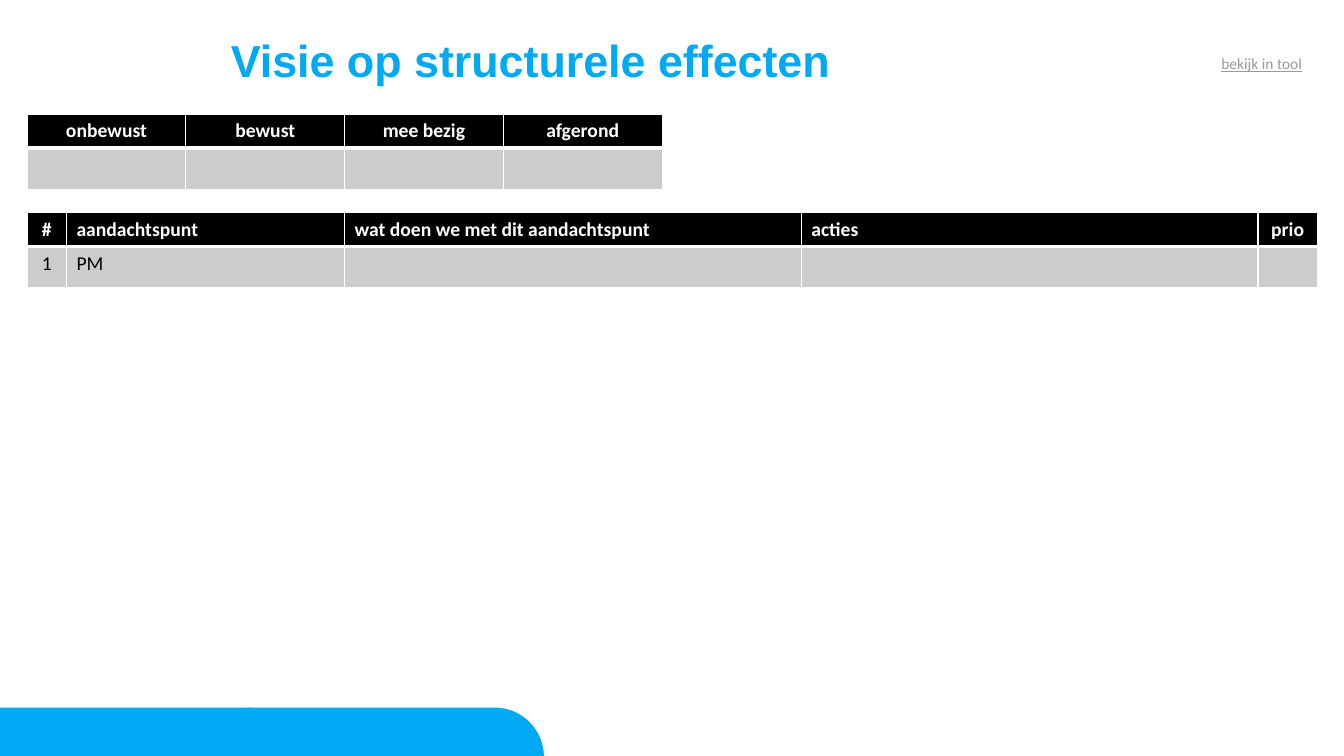
from lxml.etree import SubElement
from pptx import Presentation
from pptx.dml.color import RGBColor
from pptx.enum.text import MSO_ANCHOR, PP_ALIGN
from pptx.oxml.ns import qn
from pptx.util import Pt
from math import cos, pi, sin

TITLE = "Visie op structurele effecten"
LINK = "bekijk in tool"
# Each column: heading, width, centred
STATUS_COLUMNS = [(name, 113.4, True)
                  for name in ("onbewust", "bewust", "mee bezig", "afgerond")]
STATUS_VALUES = ["", "", "", ""]
POINT_COLUMNS = [
    ("#", 28.1, True),
    ("aandachtspunt", 198.7, False),
    ("wat doen we met dit aandachtspunt", 326.2, False),
    ("acties", 326.2, False),
    ("prio", 42.5, True),
]
POINT_VALUES = ["1", "PM", "", "", ""]

THEME = {
    "blue": "00A9F3", "black": "000000", "white": "FFFFFF",
    "cell": "CCCCCC", "link": "999999",
    "title_font": "Arial", "body_font": "Calibri",
    "title_size": 32, "table_size": 14, "link_size": 11,
}
SLIDE_W, SLIDE_H = 960, 540
TABLE_LEFT = 19.4
HEAD_H, BODY_H = 24.2, 29.5
TAB_W, TAB_H, TAB_PITCH = 211.6, 35.3, 177.6
ARC_STEPS = 24


def color(name):
    return RGBColor.from_string(THEME[name])


def style(p, role, fill, bold=False, size=None):
    p.font.name = THEME[role + "_font"]
    p.font.size = Pt(THEME[(size or role) + "_size"])
    p.font.bold = bold
    p.font.color.rgb = color(fill)


def add_text(s, box, text):
    sp = s.shapes.add_textbox(*map(Pt, box))
    tf = sp.text_frame
    tf.word_wrap = True
    tf.text = text
    return tf, tf.paragraphs[0]


def add_footer_tab(s, left):
    """Bar along the bottom edge with a quarter-round top right corner."""
    top, right = SLIDE_H - TAB_H + 0.7, left + TAB_W
    bottom = top + TAB_H
    angles = [pi / 2 * (1 - i / ARC_STEPS) for i in range(ARC_STEPS + 1)]
    arc = [(right - TAB_H + TAB_H * cos(a), bottom - TAB_H * sin(a))
           for a in angles]
    fb = s.shapes.build_freeform(Pt(left), Pt(bottom))
    fb.add_line_segments([(Pt(x), Pt(y)) for x, y in [(left, top)] + arc])
    sp = fb.convert_to_shape()
    sp.shadow.inherit = False
    sp.fill.solid()
    sp.fill.fore_color.rgb = color("blue")
    sp.line.fill.background()


def set_borders(cell, bottom):
    tcPr = cell._tc.get_or_add_tcPr()
    widths = {"a:lnL": 1, "a:lnR": 1, "a:lnT": 1, "a:lnB": bottom}
    for i, (tag, width) in enumerate(widths.items()):
        ln = SubElement(tcPr, qn(tag), w=str(Pt(width)))
        SubElement(SubElement(ln, qn("a:solidFill")), qn("a:srgbClr"),
                   val=THEME["white"])
        tcPr.insert(i, ln)


def add_grid(s, top, columns, values):
    width = sum(w for _, w, _ in columns)
    table = s.shapes.add_table(2, len(columns), Pt(TABLE_LEFT), Pt(top),
                               Pt(width), Pt(HEAD_H + BODY_H)).table
    table.rows[0].height, table.rows[1].height = Pt(HEAD_H), Pt(BODY_H)
    for c, ((heading, w, centred), value) in enumerate(zip(columns, values)):
        table.columns[c].width = Pt(w)
        for r, text in enumerate((heading, value)):
            head = r == 0
            cell = table.cell(r, c)
            cell.fill.solid()
            cell.fill.fore_color.rgb = color("black" if head else "cell")
            set_borders(cell, 3 if head else 1)
            cell.text = text
            p = cell.text_frame.paragraphs[0]
            p.alignment = PP_ALIGN.CENTER if centred else PP_ALIGN.LEFT
            style(p, "body", "white" if head else "black", head, "table")


def main():
    prs = Presentation()
    prs.slide_width, prs.slide_height = Pt(SLIDE_W), Pt(SLIDE_H)
    s = prs.slides.add_slide(prs.slide_layouts[6])

    for i in range(2):
        add_footer_tab(s, -0.7 + i * TAB_PITCH)

    tf, p = add_text(s, (164.9, 24.5, 430.6, 41), TITLE)
    tf.margin_left = tf.margin_right = tf.margin_top = tf.margin_bottom = 0
    tf.vertical_anchor = MSO_ANCHOR.MIDDLE
    p.line_spacing = 0.9
    style(p, "title", "blue", bold=True)

    add_grid(s, 151.9, POINT_COLUMNS, POINT_VALUES)
    add_grid(s, 81.4, STATUS_COLUMNS, STATUS_VALUES)

    _, p = add_text(s, (865.4, 35.3, 74.9, 20.9), LINK)
    style(p, "body", "link", size="link")
    p.font.underline = True

    prs.save("out.pptx")


if __name__ == "__main__":
    main()
